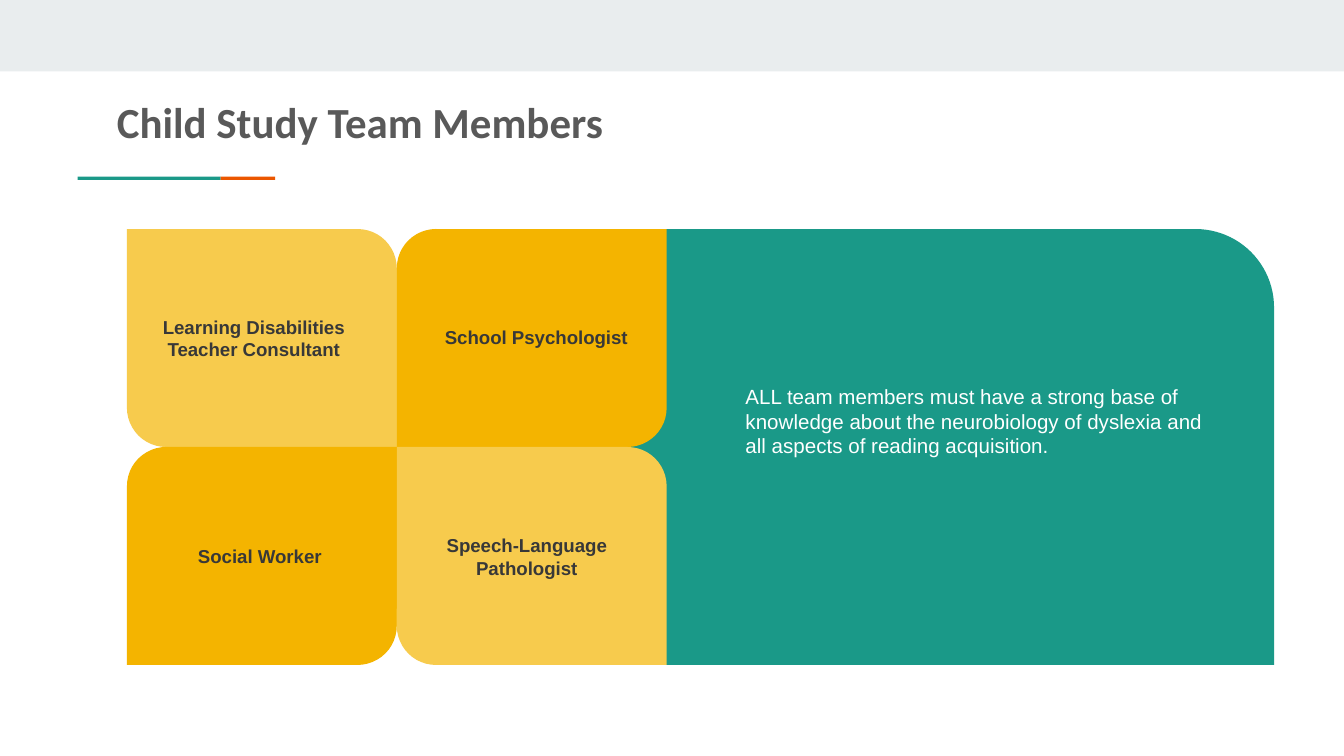
from dataclasses import dataclass

from pptx import Presentation
from pptx.dml.color import RGBColor
from pptx.enum.shapes import MSO_SHAPE
from pptx.enum.text import MSO_ANCHOR, PP_ALIGN
from pptx.util import Cm, Pt

RECT = MSO_SHAPE.RECTANGLE
DIAGONAL = MSO_SHAPE.ROUND_2_DIAG_RECTANGLE
TOP, MIDDLE = MSO_ANCHOR.TOP, MSO_ANCHOR.MIDDLE
LEFT, CENTER = PP_ALIGN.LEFT, PP_ALIGN.CENTER


@dataclass(frozen=True)
class Theme:
    band: str = "E9EDEE"
    teal: str = "1A9988"
    orange: str = "EB5600"
    amber: str = "F4B400"
    light_amber: str = "F7CB4D"
    title: str = "595959"
    label: str = "383838"
    white: str = "FFFFFF"
    title_size: float = 23
    body_size: float = 11
    label_size: float = 10
    heading_font: str = "Calibri"
    body_font: str = "Arial"


@dataclass(frozen=True)
class Box:
    """Position and size in centimetres."""
    x: float
    y: float
    w: float
    h: float

    def lengths(self) -> tuple:
        return Cm(self.x), Cm(self.y), Cm(self.w), Cm(self.h)


@dataclass(frozen=True)
class Member:
    row: int
    col: int
    role: str
    label: Box


THEME = Theme()
SLIDE_W, SLIDE_H = 25.4, 14.29
GRID_X, GRID_Y, TILE_W, TILE_H = 2.4, 4.33, 5.1, 4.12
CORNER = 0.18
INSET = 0.25

TITLE_FORMAT = dict(name=THEME.heading_font, size=Pt(THEME.title_size), bold=True)
BODY_FORMAT = dict(name=THEME.body_font, size=Pt(THEME.body_size), bold=False)
LABEL_FORMAT = dict(name=THEME.body_font, size=Pt(THEME.label_size), bold=True)

MEMBERS = [
    Member(0, 0, "Learning Disabilities Teacher Consultant", Box(2.79, 5.64, 4.01, 1.5)),
    Member(0, 1, "School Psychologist", Box(8.08, 5.77, 4.11, 1.22)),
    Member(1, 0, "Social Worker", Box(2.79, 9.91, 4.24, 1.22)),
    Member(1, 1, "Speech-Language Pathologist", Box(7.95, 9.91, 4.01, 1.22)),
]


def add_block(s, box: Box, color: str, kind=RECT, corners: tuple = ()):
    """Add a flat shape; corners are its adjustment values."""
    sp = s.shapes.add_shape(kind, *box.lengths())
    sp.shadow.inherit = False
    sp.fill.solid()
    sp.fill.fore_color.rgb = RGBColor.from_string(color)
    sp.line.fill.background()
    for i, value in enumerate(corners):
        sp.adjustments[i] = value
    return sp


def write(sp, text: str, font: dict, color: str, align=LEFT, anchor=TOP) -> None:
    tf = sp.text_frame
    frame = dict(word_wrap=True, vertical_anchor=anchor)
    for side in ("left", "right", "top", "bottom"):
        frame[f"margin_{side}"] = Cm(INSET)
    for name, value in frame.items():
        setattr(tf, name, value)
    p = tf.paragraphs[0]
    p.alignment = align
    r = p.add_run()
    r.text = text
    for name, value in font.items():
        setattr(r.font, name, value)
    r.font.color.rgb = RGBColor.from_string(color)


def add_title(s, text: str) -> None:
    sp = s.shapes.title
    sp.left, sp.top, sp.width, sp.height = Box(1.96, 1.55, 23.24, 1.78).lengths()
    write(sp, text, TITLE_FORMAT, THEME.title)


def add_panel(s) -> None:
    x = GRID_X + 1.5 * TILE_W
    add_block(s, Box(x, GRID_Y, 24.08 - x, 2 * TILE_H), THEME.teal, DIAGONAL, (0, CORNER))
    sp = add_block(s, Box(13.84, 7.01, 9.22, 2.97), THEME.teal)
    write(sp, "ALL team members must have a strong base of knowledge about the "
              "neurobiology of dyslexia and all aspects of reading acquisition.",
          BODY_FORMAT, THEME.white)


def add_member(s, member: Member) -> None:
    """Tiles on the main diagonal are light and round the other two corners."""
    on_diagonal = member.row == member.col
    box = Box(GRID_X + member.col * TILE_W, GRID_Y + member.row * TILE_H, TILE_W, TILE_H)
    add_block(s, box, THEME.light_amber if on_diagonal else THEME.amber, DIAGONAL,
              (0, CORNER) if on_diagonal else (CORNER, 0))
    sp = s.shapes.add_textbox(*member.label.lengths())
    write(sp, member.role, LABEL_FORMAT, THEME.label, CENTER, MIDDLE)


def main() -> None:
    prs = Presentation()
    prs.slide_width, prs.slide_height = Cm(SLIDE_W), Cm(SLIDE_H)
    s = prs.slides.add_slide(prs.slide_layouts[5])

    add_block(s, Box(0, 0, SLIDE_W, 1.35), THEME.band)
    add_block(s, Box(1.47, 3.34, 2.7, 0.06), THEME.teal)
    add_block(s, Box(4.17, 3.34, 1.03, 0.06), THEME.orange)
    add_title(s, "Child Study Team Members")
    add_panel(s)
    for member in MEMBERS:
        add_member(s, member)

    prs.save("out.pptx")


if __name__ == "__main__":
    main()
